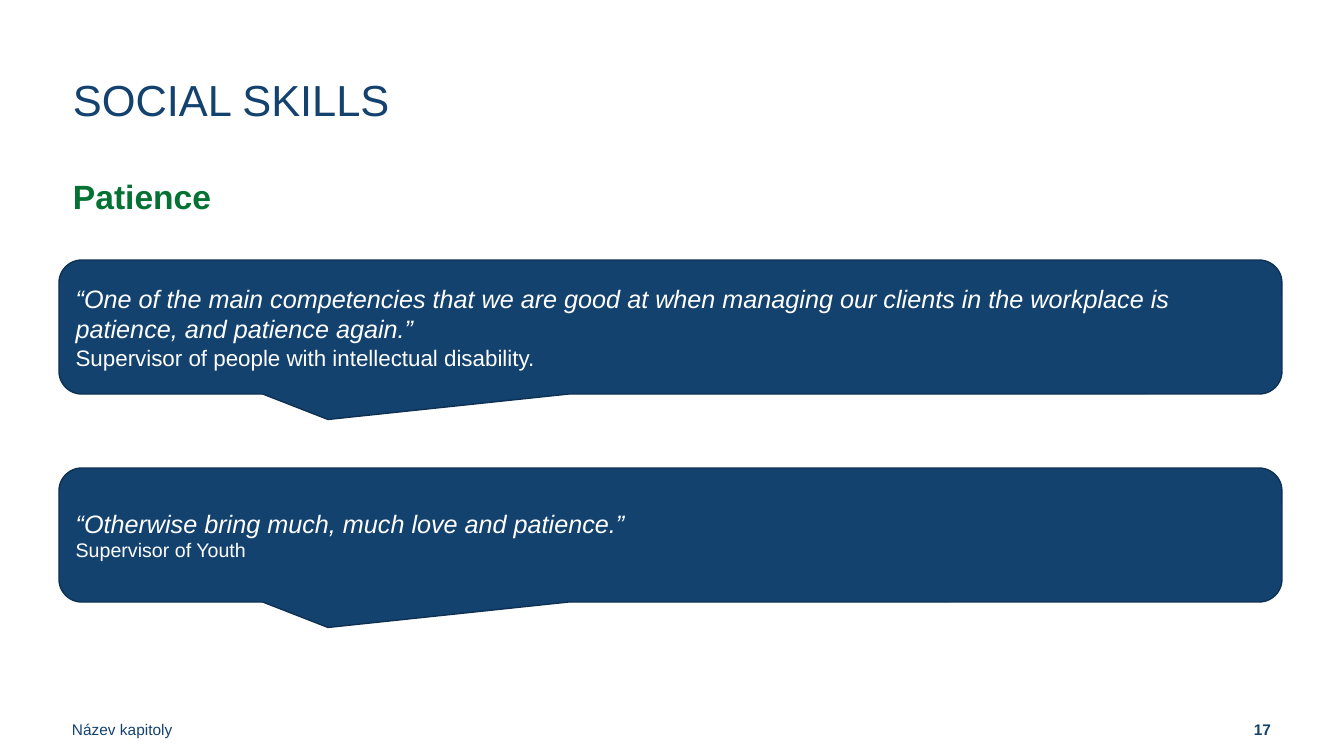
from pptx import Presentation
from pptx.dml.color import RGBColor
from pptx.enum.shapes import MSO_SHAPE
from pptx.enum.text import MSO_ANCHOR, MSO_AUTO_SIZE, PP_ALIGN
from pptx.util import Pt

UNIT = 914400 / 100.8
HUES = {"navy": "13426F", "edge": "0E3152", "green": "057233", "white": "FFFFFF"}
QUOTES = [
    ("“One of the main competencies that we are good at when managing our "
     "clients in the workplace is patience, and patience again.”",
     "Supervisor of people with intellectual disability.", 16),
    ("“Otherwise bring much, much love and patience.”", "Supervisor of Youth", 14),
]


def px(num):
    """Turn pixels into EMU."""
    return round(num * UNIT)


def hue(name):
    """Give a named colour."""
    return RGBColor.from_string(HUES[name])


def apply(item, form):
    """Set each format value on an item."""
    for key, val in form.items():
        setattr(item, key, val)


def place(shape, box):
    """Move a shape to a pixel box."""
    apply(shape, dict(zip(("left", "top", "width", "height"), map(px, box))))


def frame(shape, pads, anchor):
    """Set the insets, wrap and anchor of a shape's text."""
    sides = ("margin_left", "margin_top", "margin_right", "margin_bottom")
    form = dict(zip(sides, map(px, pads)))
    form |= {"word_wrap": True, "auto_size": MSO_AUTO_SIZE.NONE,
             "vertical_anchor": anchor}
    apply(shape.text_frame, form)


def write(para, text, size, tint, font=None, **form):
    """Put styled text into a paragraph."""
    run = para.add_run()
    run.text = text
    apply(run.font, {"name": "Arial", "size": Pt(size), **(font or {})})
    run.font.color.rgb = hue(tint)
    apply(para, {"alignment": PP_ALIGN.LEFT, "space_before": Pt(0), **form})


def head(slide, box):
    """Place the title."""
    title = slide.shapes.title
    place(title, box)
    frame(title, (0, 5, 10, 5), MSO_ANCHOR.TOP)
    write(title.text_frame.paragraphs[0], "SOCIAL SKILLS", 31, "navy",
          line_spacing=Pt(34))


def topic(slide, box):
    """Place the green subheading."""
    note = slide.shapes.add_textbox(*map(px, box))
    frame(note, (0, 5, 10, 5), MSO_ANCHOR.TOP)
    write(note.text_frame.paragraphs[0], "Patience", 24, "green",
          {"bold": True}, line_spacing=1.07)


def quote(slide, box, words, source, size):
    """Place a speech bubble with a quote and its speaker."""
    bubble = slide.shapes.add_shape(MSO_SHAPE.ROUNDED_RECTANGULAR_CALLOUT,
                                    *map(px, box))
    for pos, val in enumerate((-0.28, 0.69, 0.17)):
        bubble.adjustments[pos] = val
    bubble.shadow.inherit = False
    bubble.fill.solid()
    bubble.fill.fore_color.rgb = hue("navy")
    bubble.line.color.rgb = hue("edge")
    bubble.line.width = Pt(1)
    frame(bubble, (10, 5, 10, 5), MSO_ANCHOR.MIDDLE)
    text = bubble.text_frame
    write(text.paragraphs[0], words, 18, "white", {"italic": True})
    write(text.add_paragraph(), source, size, "white")


def foot(slide, box):
    """Place the chapter name and page number along the bottom."""
    left, top, width, high = box
    parts = [
        ("Název kapitoly", left, 454, (72, 5, 0, 16), PP_ALIGN.LEFT, False),
        ("17", left + width - 302, 302, (0, 5, 72, 16), PP_ALIGN.RIGHT, True),
    ]
    for text, start, wide, pads, side, bold in parts:
        note = slide.shapes.add_textbox(*map(px, (start, top, wide, high)))
        frame(note, pads, MSO_ANCHOR.BOTTOM)
        write(note.text_frame.paragraphs[0], text, 11, "navy", {"bold": bold},
              alignment=side, line_spacing=Pt(13.3))


def main():
    """Build and save the deck."""
    deck = Presentation()
    apply(deck, {"slide_width": px(1344), "slide_height": px(756)})
    slide = deck.slides.add_slide(deck.slide_layouts[5])
    foot(slide, (0, 694, 1343, 61))
    head(slide, (73, 73, 1223, 113))
    topic(slide, (73, 168, 1223, 60))
    for row, item in enumerate(QUOTES):
        quote(slide, (59, 260 + 208 * row, 1223, 134), *item)
    deck.save("out.pptx")


if __name__ == "__main__":
    main()
